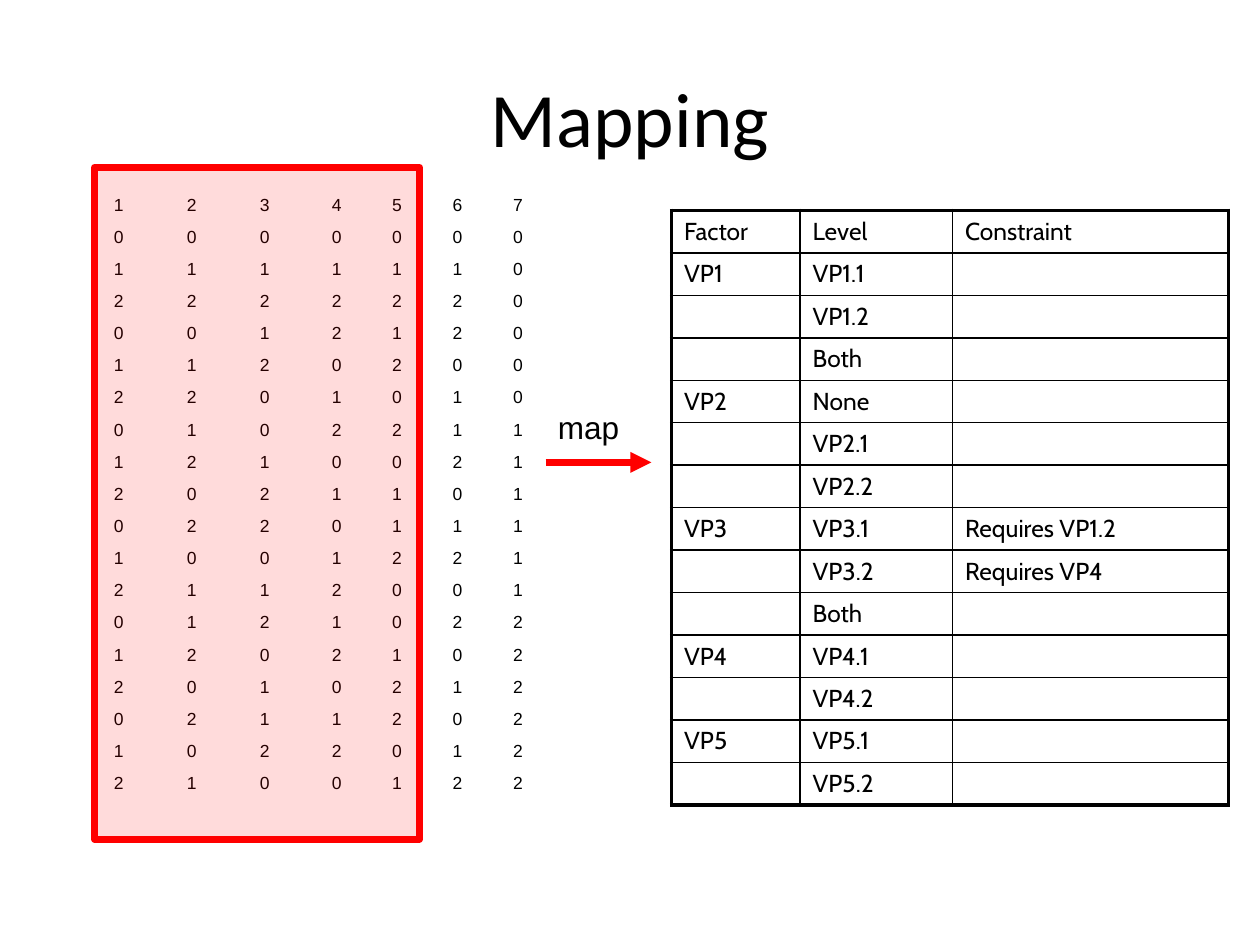
from lxml.etree import SubElement
from pptx import Presentation
from pptx.dml.color import RGBColor
from pptx.enum.shapes import MSO_CONNECTOR, MSO_SHAPE
from pptx.enum.text import MSO_ANCHOR, PP_ALIGN
from pptx.oxml.ns import qn
from pptx.util import Inches, Pt

BLACK = "000000"
RED = "FF0000"

ARRAY_ROWS = [
    "1234567",
    "0000000", "1111110", "2222220",
    "0012120", "1120200", "2201010",
    "0102211", "1210021", "2021101",
    "0220111", "1001221", "2112001",
    "0121022", "1202102", "2010212",
    "0211202", "1022012", "2100122",
]
ARRAY_WIDTHS = [1.25, 0.58, 0.58, 0.57, 0.48, 0.48, 0.48]

FACTOR_ROWS = [
    ("Factor", "Level", "Constraint"),
    ("VP1", "VP1.1", ""),
    ("", "VP1.2", ""),
    ("", "Both", ""),
    ("VP2", "None", ""),
    ("", "VP2.1", ""),
    ("", "VP2.2", ""),
    ("VP3", "VP3.1", "Requires VP1.2"),
    ("", "VP3.2", "Requires VP4"),
    ("", "Both", ""),
    ("VP4", "VP4.1", ""),
    ("", "VP4.2", ""),
    ("VP5", "VP5.1", ""),
    ("", "VP5.2", ""),
]
FACTOR_WIDTHS = [1.02, 1.21, 2.19]


def color(value):
    """Turn a hex string into a colour."""
    return RGBColor.from_string(value)


def write(frame, text, size, name, align=PP_ALIGN.LEFT):
    """Put one styled paragraph into a text frame."""
    frame.text = text
    para = frame.paragraphs[0]
    para.alignment = align
    for span in para.runs:
        span.font.size = Pt(size)
        span.font.name = name
        span.font.color.rgb = color(BLACK)
    if not text:
        SubElement(para._p, qn("a:endParaRPr"), sz=str(size * 100))


def add_label(page, box, text, size, name, align=PP_ALIGN.LEFT, wrap=False):
    """Add a text box."""
    label = page.shapes.add_textbox(*map(Inches, box))
    label.text_frame.word_wrap = wrap
    label.text_frame.vertical_anchor = MSO_ANCHOR.MIDDLE
    write(label.text_frame, text, size, name, align)


def add_grid(page, box, rows, widths):
    """Add a plain table with equal row heights."""
    frame = page.shapes.add_table(len(rows), len(widths), *map(Inches, box))
    table = frame.table
    table.first_row = False
    table.horz_banding = False
    for column, width in zip(table.columns, widths):
        column.width = Inches(width)
    for row in table.rows:
        row.height = Inches(box[3] / len(rows))
    return table


def set_border(cell, side, width):
    """Draw one side of a table cell."""
    line = SubElement(cell._tc.get_or_add_tcPr(), qn(f"a:ln{side}"), w=str(Pt(width)))
    fill = SubElement(line, qn("a:solidFill"))
    SubElement(fill, qn("a:srgbClr"), val=BLACK)


def add_array(page, box):
    """Add the orthogonal array of levels."""
    table = add_grid(page, box, ARRAY_ROWS, ARRAY_WIDTHS)
    for row, values in enumerate(ARRAY_ROWS):
        for column, value in enumerate(values):
            cell = table.cell(row, column)
            cell.fill.background()
            cell.margin_top = 0
            cell.vertical_anchor = MSO_ANCHOR.BOTTOM
            write(cell.text_frame, value, 10, "Arial", PP_ALIGN.RIGHT)


def add_factors(page, box):
    """Add the factor table with a heavy outer frame."""
    table = add_grid(page, box, FACTOR_ROWS, FACTOR_WIDTHS)
    last_row = len(FACTOR_ROWS) - 1
    last_column = len(FACTOR_WIDTHS) - 1
    for row, values in enumerate(FACTOR_ROWS):
        for column, value in enumerate(values):
            cell = table.cell(row, column)
            write(cell.text_frame, value, 14, "Cabin")
            outer = {"L": column == 0, "R": column == last_column,
                     "T": row == 0, "B": row == last_row}
            for side, heavy in outer.items():
                set_border(cell, side, 2.25 if heavy else 1)
            cell.fill.background()


def add_map_arrow(page, box):
    """Add the arrow along the bottom of its box, with its label above."""
    left, top, width, height = box
    arrow = page.shapes.add_connector(
        MSO_CONNECTOR.STRAIGHT, Inches(left), Inches(top + height),
        Inches(left + width), Inches(top + height))
    arrow.line.color.rgb = color(RED)
    arrow.line.width = Pt(4)
    SubElement(arrow.line._get_or_add_ln(), qn("a:tailEnd"), type="triangle")
    SubElement(arrow._element.spPr, qn("a:effectLst"))
    add_label(page, (left, top, 0.73, 0.43), "map", 18, "Arial")


def add_highlight(page, box):
    """Add the translucent frame over the columns in use."""
    frame = page.shapes.add_shape(MSO_SHAPE.RECTANGLE, *map(Inches, box))
    frame.shadow.inherit = False
    frame.fill.solid()
    frame.fill.fore_color.rgb = color(RED)
    tint = frame._element.spPr.find(qn("a:solidFill")).find(qn("a:srgbClr"))
    SubElement(tint, qn("a:alpha"), val="14000")
    frame.line.color.rgb = color(RED)
    frame.line.width = Pt(4)


def main():
    """Build the mapping slide."""
    deck = Presentation()
    deck.slide_width = Inches(10)
    deck.slide_height = Inches(7.5)
    page = deck.slides.add_slide(deck.slide_layouts[6])
    add_label(page, (0.5, 0.3, 9, 1.25), "Mapping", 44, "Calibri", PP_ALIGN.CENTER, True)
    add_factors(page, (5.33, 1.67, 4.42, 4.72))
    add_array(page, (-0.17, 1.5, 4.42, 4.85))
    add_map_arrow(page, (4.33, 3.17, 0.84, 0.5))
    add_highlight(page, (0.75, 1.33, 2.58, 5.33))
    deck.save("out.pptx")


if __name__ == "__main__":
    main()
